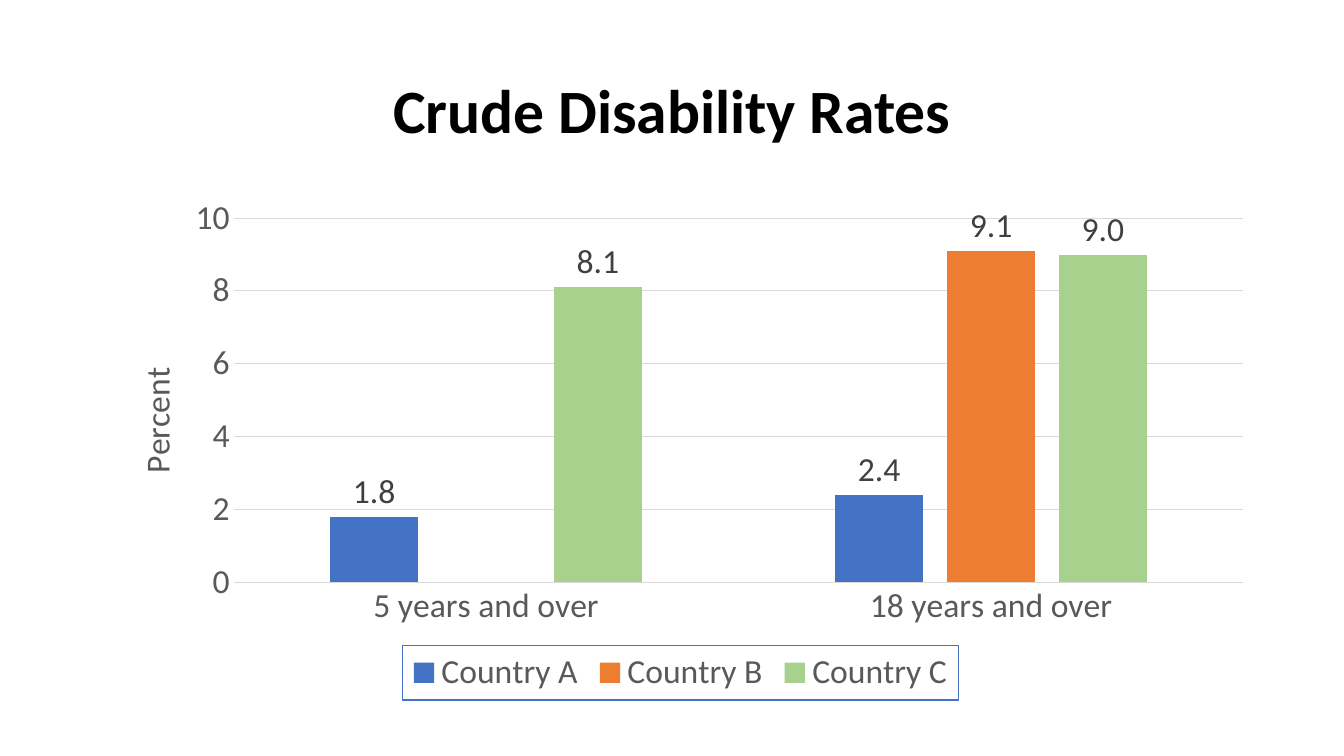
from typing import NamedTuple, Optional

from lxml import etree
from pptx import Presentation
from pptx.chart.data import CategoryChartData
from pptx.dml.color import RGBColor
from pptx.enum.chart import XL_CHART_TYPE, XL_LABEL_POSITION, XL_LEGEND_POSITION, XL_TICK_MARK
from pptx.enum.text import MSO_ANCHOR, PP_ALIGN
from pptx.oxml import parse_xml
from pptx.oxml.ns import nsdecls, qn
from pptx.util import Pt

CLUSTERED = XL_CHART_TYPE.COLUMN_CLUSTERED
OUTSIDE_END = XL_LABEL_POSITION.OUTSIDE_END
BOTTOM = XL_LEGEND_POSITION.BOTTOM
NO_TICK = XL_TICK_MARK.NONE
MIDDLE = MSO_ANCHOR.MIDDLE
CENTER = PP_ALIGN.CENTER

FONT = "Calibri"
GREY = "595959"
PALE = "D9D9D9"
BLUE = "4472C4"


class Country(NamedTuple):
    name: str
    rates: tuple[Optional[float], ...]
    color: str


AGE_GROUPS = ("5 years and over", "18 years and over")
COUNTRIES = (
    Country("Country A", (1.8, 2.4), BLUE),
    Country("Country B", (None, 9.1), "ED7D31"),
    Country("Country C", (8.1, 9.0), "A9D18E"),
)


def rgb(color: str) -> RGBColor:
    return RGBColor.from_string(color)


def style_font(font, size: float, color: str, bold: bool = False) -> None:
    font.name = FONT
    font.size = Pt(size)
    font.bold = bold
    font.color.rgb = rgb(color)


def style_line(line, color: str) -> None:
    line.color.rgb = rgb(color)
    line.width = Pt(0.75)


def place(element, index: int, **fractions: float) -> None:
    for old in element.findall(qn("c:layout")):
        element.remove(old)
    layout = parse_xml(f"<c:layout {nsdecls('c')}/>")
    manual = etree.SubElement(layout, qn("c:manualLayout"))
    if "w" in fractions and index == 0:
        etree.SubElement(manual, qn("c:layoutTarget")).set("val", "inner")
    for side in ("x", "y"):
        etree.SubElement(manual, qn(f"c:{side}Mode")).set("val", "edge")
    for name, value in fractions.items():
        etree.SubElement(manual, qn(f"c:{name}")).set("val", str(value))
    element.insert(index, layout)


def add_title(page, text: str) -> None:
    title = page.shapes.title
    title.left, title.top, title.width, title.height = Pt(66.24), Pt(28.8), Pt(828), Pt(104.4)
    frame = title.text_frame
    frame.text = text
    frame.vertical_anchor = MIDDLE
    para = frame.paragraphs[0]
    para.alignment = CENTER
    para.line_spacing = 0.9
    style_font(para.runs[0].font, 44, "000000", bold=True)


def style_axes(chart) -> None:
    ages, rates = chart.category_axis, chart.value_axis
    for axis in (ages, rates):
        axis.major_tick_mark = axis.minor_tick_mark = NO_TICK
        style_font(axis.tick_labels.font, 24, GREY)
    style_line(ages.format.line, PALE)
    rates.format.line.fill.background()
    style_line(rates.major_gridlines.format.line, PALE)
    rates.minimum_scale, rates.maximum_scale, rates.major_unit = 0, 10, 2
    rates.tick_labels.number_format = "0"
    rates.tick_labels.number_format_is_linked = False
    frame = rates.axis_title.text_frame
    frame.text = "Percent"
    style_font(frame.paragraphs[0].runs[0].font, 24, GREY)


def style_legend(chart) -> None:
    chart.has_legend = True
    legend = chart.legend
    legend.position = BOTTOM
    legend.include_in_layout = False
    style_font(legend.font, 24, GREY)
    border = parse_xml(
        f'<c:spPr {nsdecls("c", "a")}><a:noFill/><a:ln w="{Pt(0.75)}">'
        f'<a:solidFill><a:srgbClr val="{BLUE}"/></a:solidFill></a:ln></c:spPr>'
    )
    chart._chartSpace.xpath(".//c:legend/c:overlay")[0].addnext(border)


def add_rates_chart(page) -> None:
    data = CategoryChartData(number_format="0.0")
    data.categories = AGE_GROUPS
    for country in COUNTRIES:
        data.add_series(country.name, country.rates)
    chart = page.shapes.add_chart(
        CLUSTERED, Pt(66.24), Pt(133.92), Pt(838.8), Pt(366.48), data
    ).chart
    chart.has_title = False
    style_font(chart.font, 24, "000000")
    style_axes(chart)
    style_legend(chart)
    plot = chart.plots[0]
    plot.gap_width, plot.overlap, plot.vary_by_categories = 219, -27, False
    for country, series in zip(COUNTRIES, plot.series):
        series.format.fill.solid()
        series.format.fill.fore_color.rgb = rgb(country.color)
        series.invert_if_negative = False
        labels = series.data_labels
        labels.show_value = True
        labels.position = OUTSIDE_END
        labels.number_format = "0.0"
        labels.number_format_is_linked = False
        style_font(labels.font, 24, "404040")
    space = chart._chartSpace
    place(space.xpath(".//c:plotArea")[0], 0, x=0.12, y=0.06, w=0.86, h=0.71)
    place(space.xpath(".//c:valAx/c:title")[0], 1, x=0.03, y=0.34)
    place(space.xpath(".//c:legend")[0], 1, x=0.264, y=0.894, w=0.473, h=0.106)


def main() -> None:
    deck = Presentation()
    deck.slide_width, deck.slide_height = Pt(960), Pt(540)
    page = deck.slides.add_slide(deck.slide_layouts[5])
    add_title(page, "Crude Disability Rates")
    add_rates_chart(page)
    deck.save("out.pptx")


if __name__ == "__main__":
    main()
